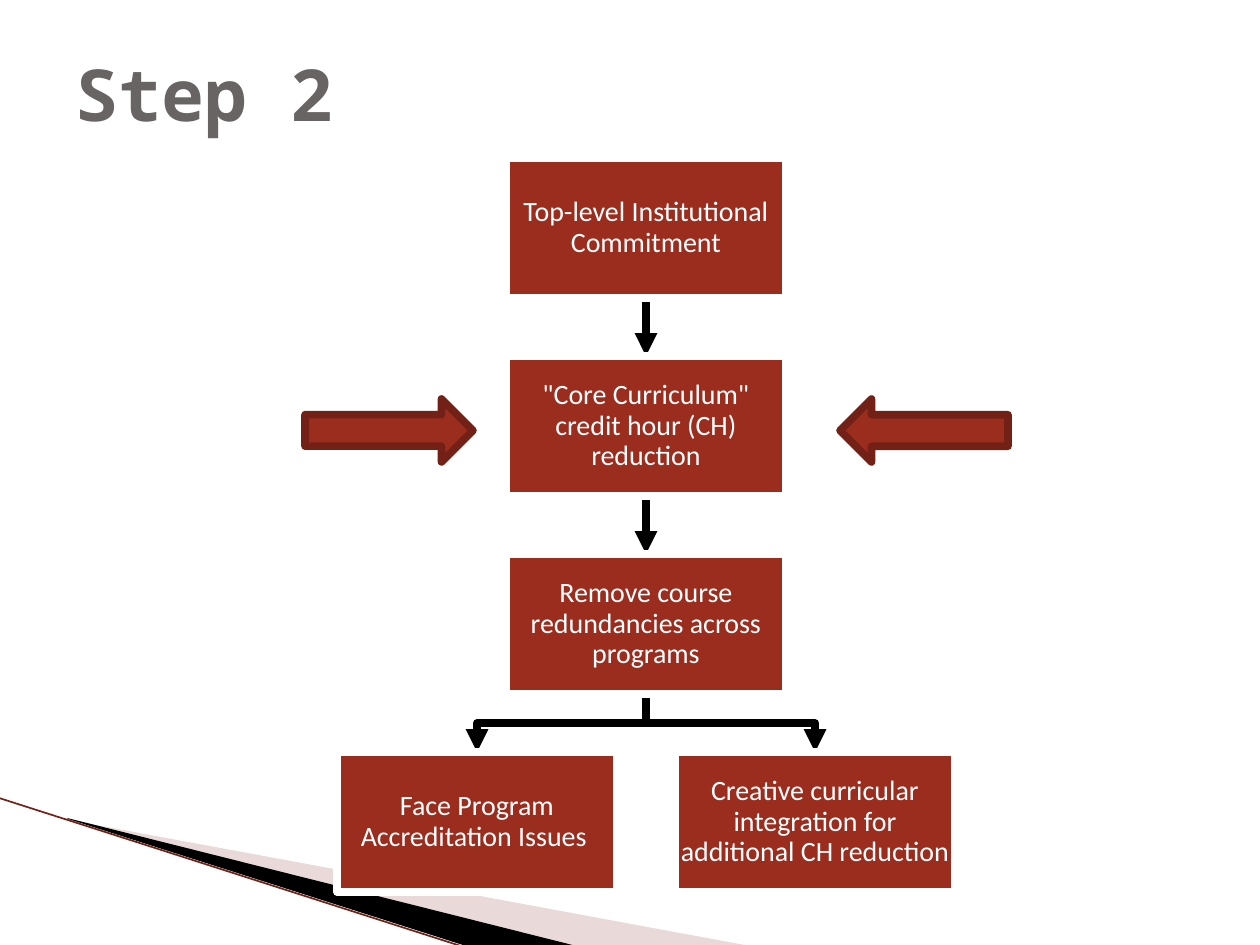
"""Build the "Step 2" slide: a flow of boxes with side arrows."""
from dataclasses import dataclass
from itertools import pairwise

from lxml.etree import SubElement
from pptx import Presentation
from pptx.dml.color import RGBColor
from pptx.enum.shapes import MSO_CONNECTOR, MSO_SHAPE
from pptx.enum.text import MSO_ANCHOR, PP_ALIGN
from pptx.oxml.ns import qn
from pptx.util import Emu, Pt

SCALE = 914400 / 126
COLORS = {"brick": "9B2D1F", "edge": "732117", "pale": "C8A2A0",
          "gray": "696464", "black": "000000", "white": "FFFFFF"}
LINE_POINTS = 4.33
BOX_WIDTH, BOX_HEIGHT = 280, 140
CENTER, TOP, ROW_PITCH, BRANCH_OFFSET = 646, 158, 198, 169


@dataclass(frozen=True)
class Step:
    text: str
    row: int
    offset: int = 0

    @property
    def center(self) -> int:
        return CENTER + self.offset

    @property
    def top(self) -> int:
        return TOP + self.row * ROW_PITCH


@dataclass(frozen=True)
class SideArrow:
    left: int
    rotation: int


STEPS = [
    Step("Top-level Institutional Commitment", 0),
    Step('"Core Curriculum" credit hour (CH) reduction', 1),
    Step("Remove course redundancies across programs", 2),
]
BRANCHES = [
    Step("Face Program Accreditation Issues ", 3, -BRANCH_OFFSET),
    Step("Creative curricular integration for additional CH reduction", 3, BRANCH_OFFSET),
]
SIDE_ARROWS = [SideArrow(305, 0), SideArrow(840, 180)]


def px(value: int) -> Emu:
    return Emu(round(value * SCALE))


def color(name: str) -> RGBColor:
    return RGBColor.from_string(COLORS[name])


def set_line(shape, name: str, points: float = LINE_POINTS) -> None:
    shape.line.color.rgb = color(name)
    shape.line.width = Pt(points)


def add_arrowhead(shape) -> None:
    SubElement(shape.line._get_or_add_ln(), qn("a:tailEnd"), type="triangle")


def write_text(box, text: str, *, font: str, size: int, fill: str, bold: bool = False,
               align=PP_ALIGN.LEFT, spacing: float = 1.0, inset: int | None = None) -> None:
    frame = box.text_frame
    frame.word_wrap = True
    frame.vertical_anchor = MSO_ANCHOR.MIDDLE
    if inset is not None:
        frame.margin_left = frame.margin_right = px(inset)
        frame.margin_top = frame.margin_bottom = px(inset)
    para = frame.paragraphs[0]
    para.alignment = align
    para.line_spacing = spacing
    span = para.add_run()
    span.text = text
    span.font.name = font
    span.font.size = Pt(size)
    span.font.bold = bold
    span.font.color.rgb = color(fill)


def add_outline(page, points: list[tuple[int, int]], close: bool):
    builder = page.shapes.build_freeform(*points[0], scale=SCALE)
    builder.add_line_segments(points[1:], close=close)
    shape = builder.convert_to_shape()
    shape.shadow.inherit = False
    return shape


def add_wedge(page, points: list[tuple[int, int]], fill: str, alpha: int = 100) -> None:
    wedge = add_outline(page, points, close=True)
    wedge.fill.solid()
    wedge.fill.fore_color.rgb = color(fill)
    wedge.line.fill.background()
    if alpha < 100:
        tint = wedge.element.spPr.find(qn("a:solidFill"))[0]
        SubElement(tint, qn("a:alpha"), val=str(alpha * 1000))


def add_line(page, start: tuple[int, int], end: tuple[int, int], name: str, points: float):
    line = page.shapes.add_connector(
        MSO_CONNECTOR.STRAIGHT, *map(px, start), *map(px, end))
    set_line(line, name, points)
    SubElement(line.element.spPr, qn("a:effectLst"))
    return line


def add_filled_shape(page, kind, left: int, top: int, width: int, height: int, edge: str):
    shape = page.shapes.add_shape(kind, px(left), px(top), px(width), px(height))
    shape.shadow.inherit = False
    shape.fill.solid()
    shape.fill.fore_color.rgb = color("brick")
    set_line(shape, edge)
    return shape


def add_step(page, step: Step):
    box = add_filled_shape(page, MSO_SHAPE.RECTANGLE, step.center - BOX_WIDTH // 2,
                           step.top, BOX_WIDTH, BOX_HEIGHT, "white")
    write_text(box, step.text, font="Calibri", size=16, fill="white",
               align=PP_ALIGN.CENTER, spacing=0.9, inset=1)
    return box


def add_branch(page, parent: Step, child: Step) -> None:
    start = parent.top + BOX_HEIGHT
    bend = (start + child.top) // 2
    branch = add_outline(page, [(parent.center, start), (parent.center, bend),
                                (child.center, bend), (child.center, child.top)], close=False)
    branch.fill.background()
    set_line(branch, "black")
    add_arrowhead(branch)


def add_flow(page) -> None:
    for child in BRANCHES:
        add_branch(page, STEPS[-1], child)
    boxes = [add_step(page, step) for step in STEPS + BRANCHES]
    chain = zip(pairwise(STEPS), pairwise(boxes))
    for (upper, lower), (upper_box, lower_box) in chain:
        link = add_line(page, (CENTER, upper.top + BOX_HEIGHT), (CENTER, lower.top),
                        "black", LINE_POINTS)
        link.begin_connect(upper_box, 2)
        link.end_connect(lower_box, 0)
        add_arrowhead(link)
        boxes[0].element.addprevious(link.element)


def main() -> None:
    deck = Presentation()
    deck.slide_width, deck.slide_height = px(1260), px(945)
    page = deck.slides.add_slide(deck.slide_layouts[6])

    add_wedge(page, [(69, 820), (750, 946), (575, 946), (69, 819)], "pale", alpha=40)
    add_wedge(page, [(67, 818), (576, 946), (469, 947), (68, 819)], "black")
    add_line(page, (-1, 798), (467, 948), "edge", 0.95)

    title = page.shapes.add_textbox(px(63), px(38), px(1124), px(110))
    write_text(title, "Step 2", font="Noto Sans Mono", size=41, fill="gray", bold=True)

    add_flow(page)
    for arrow in SIDE_ARROWS:
        shape = add_filled_shape(page, MSO_SHAPE.RIGHT_ARROW, arrow.left, 399, 168, 63, "edge")
        shape.rotation = arrow.rotation
    deck.save("out.pptx")


if __name__ == "__main__":
    main()
